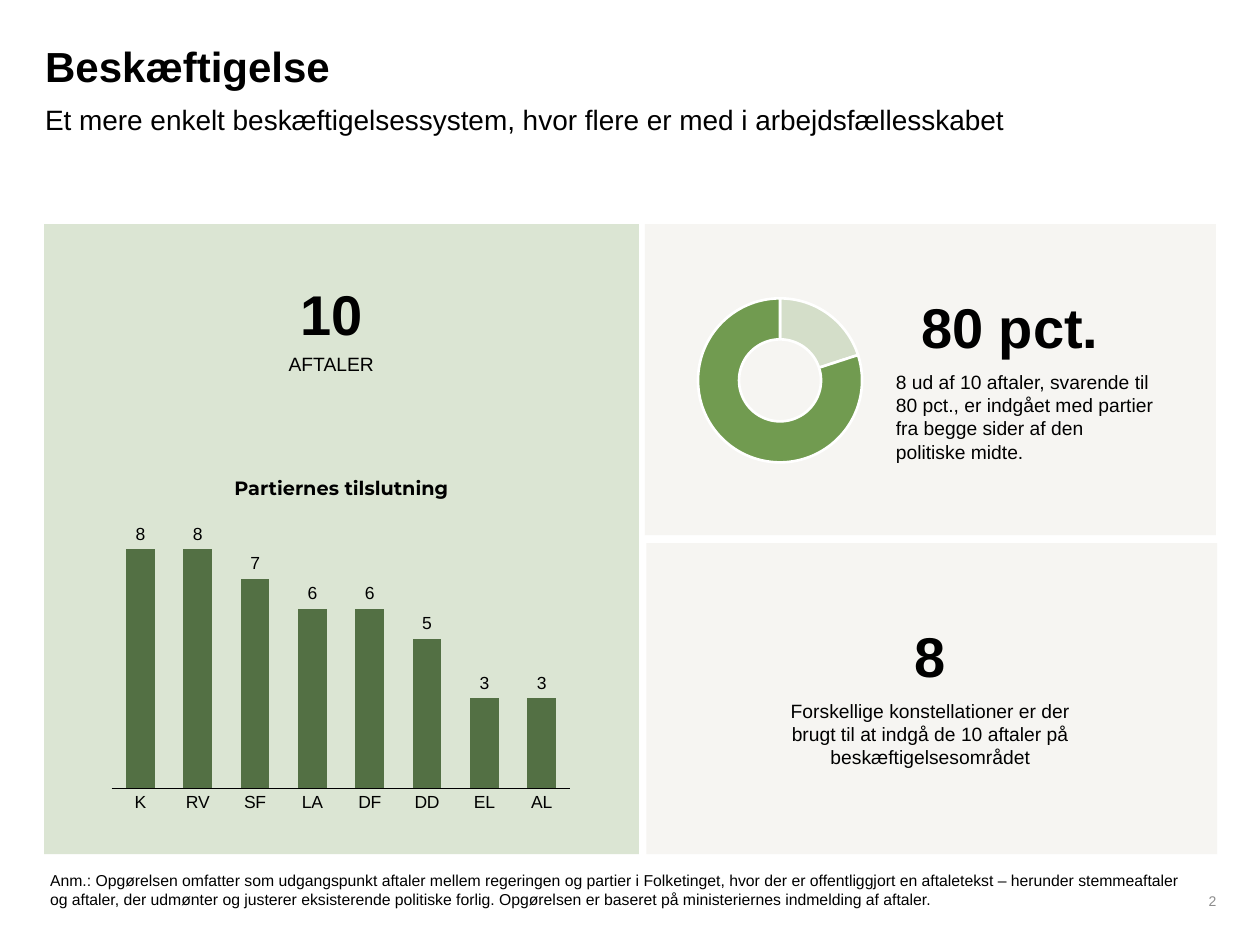
from dataclasses import dataclass

from lxml import etree
from pptx import Presentation
from pptx.chart.data import CategoryChartData
from pptx.dml.color import RGBColor
from pptx.enum.chart import XL_CHART_TYPE, XL_LABEL_POSITION, XL_TICK_MARK
from pptx.enum.shapes import MSO_SHAPE
from pptx.enum.text import MSO_ANCHOR, PP_ALIGN
from pptx.oxml import parse_xml
from pptx.oxml.ns import nsdecls, qn
from pptx.util import Cm, Pt

LEFT, CENTER, RIGHT = PP_ALIGN.LEFT, PP_ALIGN.CENTER, PP_ALIGN.RIGHT
TOP, MIDDLE, BOTTOM = MSO_ANCHOR.TOP, MSO_ANCHOR.MIDDLE, MSO_ANCHOR.BOTTOM
COLUMNS, DOUGHNUT = XL_CHART_TYPE.COLUMN_CLUSTERED, XL_CHART_TYPE.DOUGHNUT
OUTSIDE_END = XL_LABEL_POSITION.OUTSIDE_END
NO_TICK = XL_TICK_MARK.NONE
RECTANGLE = MSO_SHAPE.RECTANGLE

BLACK = RGBColor(0x00, 0x00, 0x00)
WHITE = RGBColor(0xFF, 0xFF, 0xFF)
GRAY = RGBColor(0x8C, 0x8C, 0x8C)
GREEN = RGBColor(0x71, 0x9B, 0x50)
DARK_GREEN = RGBColor(0x53, 0x70, 0x44)
SAND = RGBColor(0xF6, 0xF5, 0xF2)
BLANK_LAYOUT = 6
FONT = "Arial"


@dataclass(frozen=True)
class Area:
    """A frame on the page, in centimetres."""
    left: float
    top: float
    width: float
    height: float

    def lengths(self):
        return Cm(self.left), Cm(self.top), Cm(self.width), Cm(self.height)


@dataclass(frozen=True)
class Line:
    text: str
    size: float
    bold: bool = False
    font: str = FONT
    color: RGBColor = BLACK


@dataclass(frozen=True)
class Label:
    area: Area
    lines: tuple
    align: int = LEFT
    anchor: int = TOP
    inset_x: float = 0
    inset_y: float = 0
    space_after: float = 0
    spacing: float = 1.0


@dataclass(frozen=True)
class Panel:
    area: Area
    color: RGBColor
    opacity: int = 100


PANELS = (
    Panel(Area(0.89, 4.52, 11.99, 12.7), GREEN, 25),
    Panel(Area(13.03, 10.95, 11.51, 6.27), SAND),
    Panel(Area(13, 4.52, 11.51, 6.27), SAND),
)

LABELS = (
    # Heading
    Label(Area(0.91, 0.94, 19.99, 0.99), (Line("Beskæftigelse", 24, True),), spacing=0.9),
    Label(Area(0.91, 2.06, 23.04, 0.79),
          (Line("Et mere enkelt beskæftigelsessystem, hvor flere er med i "
                "arbejdsfællesskabet", 16),), anchor=MIDDLE, spacing=0.9),
    # Agreements and party support
    Label(Area(5.16, 5.64, 3.05, 1.37), (Line("10", 32, True),), CENTER),
    Label(Area(4.8, 7.11, 3.76, 0.48), (Line("AFTALER", 11),), CENTER),
    Label(Area(3.2, 9.58, 7.37, 0.48),
          (Line("Partiernes tilslutning", 11, True, "Montserrat"),), CENTER, BOTTOM),
    # Share across the middle
    Label(Area(18.06, 7.47, 5.23, 1.88),
          (Line("8 ud af 10 aftaler, svarende til 80 pct., er indgået med partier "
                "fra begge sider af den politiske midte.", 11),)),
    Label(Area(17.58, 5.64, 5.56, 2.69), (Line("80 pct.", 32, True),), CENTER,
          inset_x=0.25, inset_y=0.25, space_after=6),
    # Constellations
    Label(Area(15.01, 12.27, 7.49, 3.23),
          (Line("8", 32, True),
           Line("Forskellige konstellationer er der\vbrugt til at indgå de 10 aftaler "
                "på beskæftigelsesområdet", 11)),
          CENTER, inset_x=0.25, inset_y=0.25, space_after=6),
    # Footer
    Label(Area(18.8, 17.65, 5.72, 1.02), (Line("2", 8, color=GRAY),), RIGHT, MIDDLE),
    Label(Area(0.76, 17.42, 23.5, 1.02),
          (Line("Anm.: Opgørelsen omfatter som udgangspunkt aftaler mellem regeringen og "
                "partier i Folketinget, hvor der er offentliggjort en aftaletekst – herunder "
                "stemmeaftaler og aftaler, der udmønter og justerer eksisterende politiske "
                "forlig. Opgørelsen er baseret på ministeriernes indmelding af aftaler.", 9),),
          inset_x=0.25, inset_y=0.13),
)

PARTY_SUPPORT = {"K": 8, "RV": 8, "SF": 7, "LA": 6, "DF": 6, "DD": 5, "EL": 3, "AL": 3}
MIDDLE_SHARE = {"1": 20, "2": 80, "3": None}


def paint(fill, color: RGBColor, opacity: int = 100) -> None:
    fill.solid()
    fill.fore_color.rgb = color
    if opacity < 100:
        solid = fill._xPr.find(qn("a:solidFill"))
        etree.SubElement(solid[0], qn("a:alpha")).set("val", str(opacity * 1000))


def add_panel(page, panel: Panel) -> None:
    shape = page.shapes.add_shape(RECTANGLE, *panel.area.lengths())
    shape.shadow.inherit = False
    shape.line.fill.background()
    paint(shape.fill, panel.color, panel.opacity)


def add_label(page, label: Label) -> None:
    frame = page.shapes.add_textbox(*label.area.lengths()).text_frame
    frame.word_wrap = True
    frame.vertical_anchor = label.anchor
    frame.margin_left = frame.margin_right = Cm(label.inset_x)
    frame.margin_top = frame.margin_bottom = Cm(label.inset_y)
    for index, line in enumerate(label.lines):
        para = frame.add_paragraph() if index else frame.paragraphs[0]
        para.alignment = label.align
        para.line_spacing = label.spacing
        para.space_after = Pt(label.space_after)
        for part_index, part in enumerate(line.text.split("\v")):
            if part_index:
                para.add_line_break()
            span = para.add_run()
            span.text = part
            span.font.name = line.font
            span.font.size = Pt(line.size)
            span.font.bold = line.bold
            span.font.color.rgb = line.color


def style_font(font) -> None:
    font.name = FONT
    font.size = Pt(10)
    font.color.rgb = BLACK


def add_chart(page, kind: int, area: Area, values: dict):
    data = CategoryChartData()
    data.categories = list(values)
    data.add_series("Series 1", list(values.values()))
    chart = page.shapes.add_chart(kind, *area.lengths(), data).chart
    chart.has_legend = chart.has_title = False
    style_font(chart.font)
    return chart


def add_party_chart(page) -> None:
    chart = add_chart(page, COLUMNS, Area(2.06, 10.34, 9.63, 6.17), PARTY_SUPPORT)
    plot = chart.plots[0]
    plot.gap_width = 100
    plot.vary_by_categories = False
    paint(plot.series[0].format.fill, DARK_GREEN)
    plot.has_data_labels = True
    plot.data_labels.show_value = True
    plot.data_labels.position = OUTSIDE_END
    style_font(plot.data_labels.font)
    values = chart.value_axis
    values.minimum_scale, values.maximum_scale = 0, 9
    values.has_major_gridlines = False
    values.visible = False
    parties = chart.category_axis
    parties.major_tick_mark = NO_TICK
    parties.format.line.color.rgb = BLACK
    parties.format.line.width = Pt(0.75)
    style_font(parties.tick_labels.font)


def add_share_chart(page) -> None:
    chart = add_chart(page, DOUGHNUT, Area(13.77, 5.23, 3.76, 4.83), MIDDLE_SHARE)
    plot = chart.plots[0]
    plot.has_data_labels = False
    for index, opacity in enumerate((25, 100)):
        point = plot.series[0].points[index].format
        paint(point.fill, GREEN, opacity)
        point.line.color.rgb = WHITE
        point.line.width = Pt(1.5)

    # Ring thickness and place of the ring inside its frame
    plot_area = chart._chartSpace.chart.plotArea
    plot_area.find(".//" + qn("c:holeSize")).set("val", "61")
    for old in plot_area.findall(qn("c:layout")):
        plot_area.remove(old)
    settings = (("layoutTarget", "inner"), ("xMode", "edge"), ("yMode", "edge"),
                ("x", 0.08), ("y", 0.06), ("w", 0.88), ("h", 0.89))
    items = "".join(f'<c:{name} val="{value}"/>' for name, value in settings)
    plot_area.insert(0, parse_xml(
        f'<c:layout {nsdecls("c")}><c:manualLayout>{items}</c:manualLayout></c:layout>'))


def main() -> None:
    deck = Presentation()
    deck.slide_width, deck.slide_height = Cm(25.4), Cm(19.05)
    page = deck.slides.add_slide(deck.slide_layouts[BLANK_LAYOUT])
    for panel in PANELS:
        add_panel(page, panel)
    add_party_chart(page)
    add_share_chart(page)
    for label in LABELS:
        add_label(page, label)
    deck.save("out.pptx")


if __name__ == "__main__":
    main()
